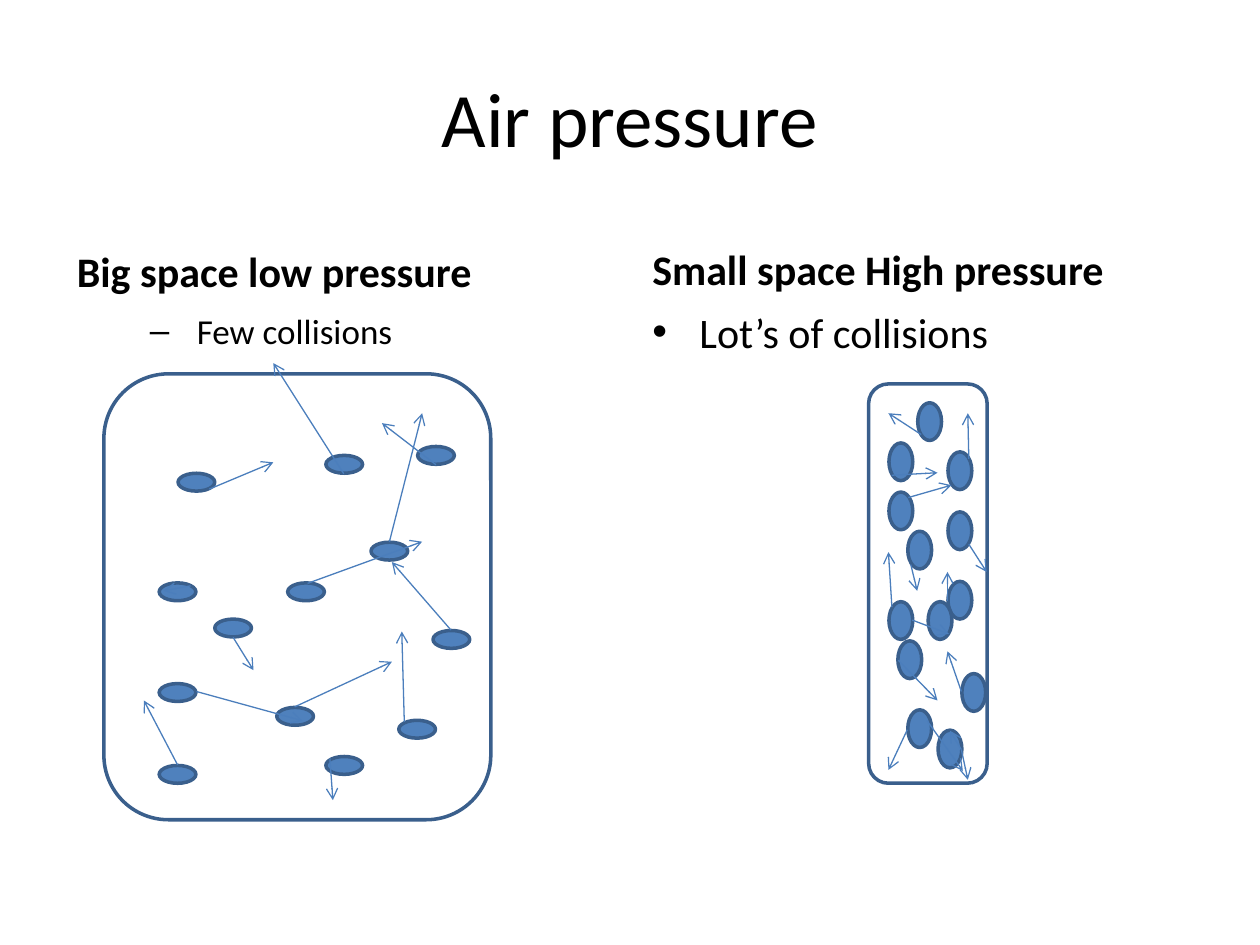
from dataclasses import dataclass

from lxml import etree
from pptx import Presentation
from pptx.dml.color import RGBColor
from pptx.enum.shapes import MSO_CONNECTOR, MSO_SHAPE
from pptx.enum.text import MSO_ANCHOR, PP_ALIGN
from pptx.oxml.ns import qn
from pptx.util import Cm, Pt

ELLIPSE, ROUNDED = MSO_SHAPE.OVAL, MSO_SHAPE.ROUNDED_RECTANGLE
STRAIGHT = MSO_CONNECTOR.STRAIGHT
TOP, MIDDLE, BOTTOM = MSO_ANCHOR.TOP, MSO_ANCHOR.MIDDLE, MSO_ANCHOR.BOTTOM
LEFT, CENTER = PP_ALIGN.LEFT, PP_ALIGN.CENTER
FILL, OUTLINE, ARROW, BLACK = "4F81BD", "3A5F8C", "4B7EBC", "000000"
Box = tuple[float, float, float, float]


@dataclass
class Label:
    text: str
    box: Box
    size: float
    bold: bool = False
    anchor: MSO_ANCHOR = TOP
    align: PP_ALIGN = LEFT
    before: float = 0
    bullet: str = ""
    margin: float = 0
    indent: float = 0


@dataclass
class Gas:
    container: Box
    rotation: int
    molecule_size: tuple[float, float]
    molecules: list[tuple[float, float]]
    paths: list[Box]


LABELS = [
    Label("Air pressure", (1.27, 0.76, 22.86, 3.18), 44, anchor=MIDDLE, align=CENTER),
    Label("Big space low pressure", (1.3, 4.32, 11.23, 1.78), 24,
          bold=True, anchor=BOTTOM, before=4.8),
    Label(" Few collisions", (1.5, 6.12, 11.23, 10.97), 20,
          before=4, bullet="–", margin=2.06, indent=-0.79),
    Label("Small space High pressure", (12.9, 4.27, 11.23, 1.78), 24,
          bold=True, anchor=BOTTOM, before=4.8),
    Label("Lot’s of collisions", (12.9, 6.05, 11.23, 10.97), 24,
          before=4.8, bullet="•", margin=0.95, indent=-0.95),
]

SMALL_SPACE = Gas(
    (14.68, 10.57, 8.05, 2.39), 90, (0.76, 0.48),
    [(17.78, 12.27), (18.36, 8.26), (17.78, 10.06), (18.97, 11.86), (18.77, 14.86),
     (18.57, 12.27), (17.78, 9.07), (18.97, 9.25), (18.16, 14.45), (18.97, 10.46),
     (19.25, 13.72), (17.96, 13.06), (18.16, 10.85)],
    [(18.57, 8.76, 17.91, 8.33), (17.98, 9.58, 18.9, 9.53),
     (19.53, 9.25, 19.51, 8.33), (18.31, 10.03, 19.18, 9.78),
     (19.53, 10.97, 19.89, 11.53), (18.36, 11.38, 18.49, 11.91),
     (18.39, 12.5, 19.13, 12.78), (19.1, 12.12, 19.1, 11.53),
     (18.11, 13.31, 18.9, 14.12), (17.98, 12.24, 17.91, 11.13),
     (19.38, 13.94, 19.1, 13.13), (18.29, 14.71, 17.91, 15.52),
     (18.69, 14.53, 19.41, 15.54), (19.38, 15.11, 19.15, 14.73),
     (19.38, 15.11, 19.51, 15.72)],
)

BIG_SPACE = Gas(
    (1.5, 8.13, 8.99, 7.8), 270, (0.36, 0.74),
    [(3.4, 15.24), (6.76, 15.06), (4.52, 12.29), (5.77, 14.07), (3.4, 13.59),
     (3.78, 9.35), (5.99, 11.56), (8.92, 12.52), (6.76, 8.99), (8.23, 14.33),
     (8.61, 8.81), (3.4, 11.56), (7.67, 10.74)],
    [(4.22, 9.86, 5.51, 9.32), (6.93, 9.55, 5.51, 7.32),
     (7.85, 10.92, 8.51, 8.33), (6.2, 11.76, 8.51, 10.92),
     (4.7, 12.85, 5.11, 13.51), (9.09, 12.7, 7.9, 11.33),
     (3.58, 15.42, 2.9, 14.12), (3.96, 13.94, 6.1, 14.53),
     (5.94, 14.25, 7.9, 13.34), (6.65, 15.29, 6.71, 16.13),
     (3.84, 11.81, 3.3, 11.91), (8.15, 14.55, 8.1, 12.73),
     (8.79, 9.37, 7.7, 8.53)],
)


def color(value: str) -> RGBColor:
    return RGBColor.from_string(value)


def lengths(values: Box) -> list[Cm]:
    return [Cm(v) for v in values]


def set_format(target, values: dict) -> None:
    for name, value in values.items():
        setattr(target, name, value)


def add_label(s, label: Label) -> None:
    tf = s.shapes.add_textbox(*lengths(label.box)).text_frame
    set_format(tf, {"word_wrap": True, "vertical_anchor": label.anchor})
    p = tf.paragraphs[0]
    set_format(p, {"alignment": label.align, "space_before": Pt(label.before)})
    if label.bullet:
        pPr = p._p.get_or_add_pPr()
        pPr.set("marL", str(Cm(label.margin)))
        pPr.set("indent", str(Cm(label.indent)))
        etree.SubElement(pPr, qn("a:buFont"), typeface="Arial")
        etree.SubElement(pPr, qn("a:buChar"), char=label.bullet)
    r = p.add_run()
    r.text = label.text
    set_format(r.font, {"name": "Calibri", "size": Pt(label.size), "bold": label.bold})
    r.font.color.rgb = color(BLACK)


def add_outlined(s, kind: MSO_SHAPE, box: Box, rotation: int, fill: str = "") -> None:
    sp = s.shapes.add_shape(kind, *lengths(box))
    sp.rotation = rotation
    sp.shadow.inherit = False
    if fill:
        sp.fill.solid()
        sp.fill.fore_color.rgb = color(fill)
    else:
        sp.fill.background()
    sp.line.color.rgb = color(OUTLINE)
    sp.line.width = Pt(2)


def add_arrow(s, ends: Box) -> None:
    cxn = s.shapes.add_connector(STRAIGHT, *lengths(ends))
    cxn.line.color.rgb = color(ARROW)
    cxn.line.width = Pt(0.75)
    etree.SubElement(cxn.line._get_or_add_ln(), qn("a:tailEnd"), type="arrow")
    etree.SubElement(cxn._element.spPr, qn("a:effectLst"))


def add_gas(s, gas: Gas) -> None:
    add_outlined(s, ROUNDED, gas.container, gas.rotation)
    for position in gas.molecules:
        add_outlined(s, ELLIPSE, position + gas.molecule_size, gas.rotation, FILL)
    for ends in gas.paths:
        add_arrow(s, ends)


def main() -> None:
    prs = Presentation()
    set_format(prs, {"slide_width": Cm(25.4), "slide_height": Cm(19.05)})
    s = prs.slides.add_slide(prs.slide_layouts[6])
    for label in LABELS:
        add_label(s, label)
    for gas in (SMALL_SPACE, BIG_SPACE):
        add_gas(s, gas)
    prs.save("out.pptx")


if __name__ == "__main__":
    main()
